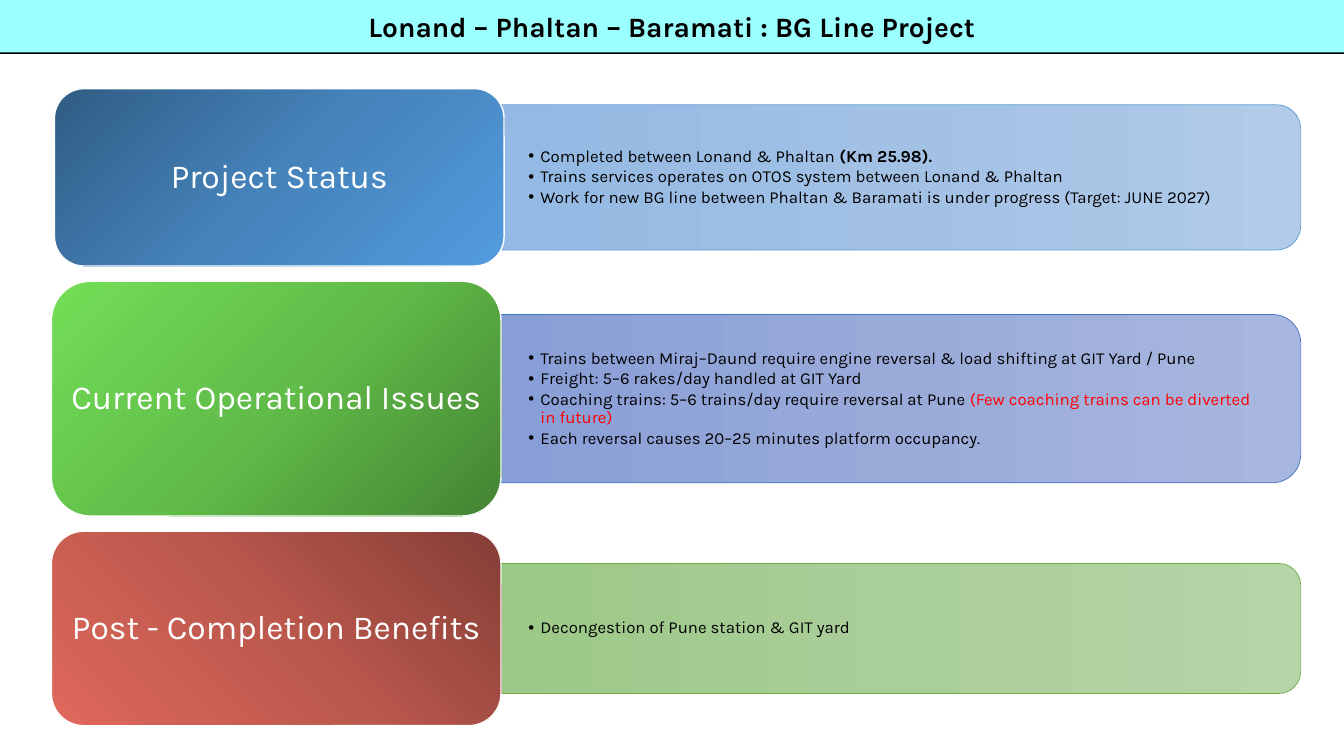
from lxml.etree import SubElement
from pptx import Presentation
from pptx.dml.color import RGBColor
from pptx.enum.shapes import MSO_SHAPE as Shape
from pptx.enum.text import MSO_ANCHOR as Anchor, MSO_AUTO_SIZE as AutoSize, PP_ALIGN as Align
from pptx.oxml import parse_xml
from pptx.oxml.ns import nsdecls, qn
from pptx.util import Inches, Pt

WIDTH, HEIGHT = 13.33, 7.5
FONT = "Karla"
BLACK, WHITE, RED = "000000", "FFFFFF", "FF0000"
TITLE = "Lonand – Phaltan – Baramati : BG Line Project"
TITLE_HEIGHT, TITLE_FILL = 0.52, "9BFFFF"
CARD_WIDTH = 4.46
PANEL_LEFT, PANEL_WIDTH = 4.97, 7.93

SECTIONS = [
    {
        "name": "Project Status",
        "card": (0.54, 0.88, 1.76), "panel_height": 1.44,
        "card_colors": ("305C84", "4583BB", "529BDE"), "focus": (0, 0),
        "panel_colors": ("B1CBE9", "A3C1E5", "93B9E4"), "outline": "5B9BD5",
        "points": [
            [("Completed between Lonand & Phaltan", BLACK, False), (" (Km 25.98).", BLACK, True)],
            [("Trains services operates on OTOS system between Lonand & Phaltan", BLACK, False)],
            [("Work for new BG line between Phaltan & Baramati is under progress (Target: JUNE 2027)",
              BLACK, False)],
        ],
    },
    {
        "name": "Current Operational Issues",
        "card": (0.51, 2.79, 2.33), "panel_height": 1.67,
        "card_colors": ("448433", "61BC49", "73DE57"), "focus": (100, 100),
        "panel_colors": ("A8B7DF", "9AABD9", "889ED7"), "outline": "4472C4",
        "points": [
            [("Trains between Miraj–Daund require engine reversal & load shifting at GIT Yard / Pune",
              BLACK, False)],
            [("Freight: 5–6 rakes/day handled at GIT Yard", BLACK, False)],
            [("Coaching trains: 5–6 trains/day require reversal at Pune ", BLACK, False),
             ("(Few coaching trains can be diverted in future)", RED, False)],
            [("Each reversal causes 20–25 minutes platform occupancy.", BLACK, False)],
        ],
    },
    {
        "name": "Post - Completion Benefits",
        "card": (0.51, 5.27, 1.93), "panel_height": 1.29,
        "card_colors": ("843E36", "BC584D", "DF685B"), "focus": (100, 0),
        "panel_colors": ("B5D5A7", "AACE9A", "9CC987"), "outline": "70AD47",
        "points": [[("Decongestion of Pune station & GIT yard", BLACK, False)]],
    },
]


def color(value):
    return RGBColor.from_string(value)


def place(shape, left, top, width, height):
    shape.left, shape.top = Inches(left), Inches(top)
    shape.width, shape.height = Inches(width), Inches(height)


def add_run(paragraph, text, size, text_color, bold=False):
    run = paragraph.add_run()
    run.text = text
    run.font.name, run.font.size, run.font.bold = FONT, Pt(size), bold
    run.font.color.rgb = color(text_color)


def set_frame(frame, horizontal, vertical):
    frame.word_wrap = True
    frame.auto_size = AutoSize.NONE
    frame.vertical_anchor = Anchor.MIDDLE
    frame.margin_left = frame.margin_right = Inches(horizontal)
    frame.margin_top = frame.margin_bottom = Inches(vertical)


def set_gradient(shape, colors, direction):
    stops = "".join(f'<a:gs pos="{index * 50000}"><a:srgbClr val="{value}"/></a:gs>'
                    for index, value in enumerate(colors))
    gradient = parse_xml(f'<a:gradFill {nsdecls("a")} rotWithShape="1">'
                         f'<a:gsLst>{stops}</a:gsLst>{direction}</a:gradFill>')
    shape._element.spPr.find(qn("a:prstGeom")).addnext(gradient)


def add_filled(slide, kind, box, colors, direction, outline, line_width):
    shape = slide.shapes.add_shape(kind, *map(Inches, box))
    shape.shadow.inherit = False
    set_gradient(shape, colors, direction)
    shape.line.color.rgb = color(outline)
    shape.line.width = Pt(line_width)
    return shape


def add_title(slide):
    title = slide.shapes.title
    place(title, 0, 0, WIDTH, TITLE_HEIGHT)
    properties = title._element.spPr
    properties.append(parse_xml(
        f'<a:prstGeom {nsdecls("a")} prst="snip2DiagRect"><a:avLst>'
        '<a:gd name="adj1" fmla="val 46600"/><a:gd name="adj2" fmla="val 16700"/>'
        '</a:avLst></a:prstGeom>'))
    title.fill.solid()
    title.fill.fore_color.rgb = color(TITLE_FILL)
    title.line.fill.background()
    title.shadow.inherit = False
    shadow = SubElement(properties.find(qn("a:effectLst")), qn("a:outerShdw"),
                        dist=str(Pt(1)), dir="5400000", rotWithShape="0")
    SubElement(shadow, qn("a:srgbClr"), val=BLACK)
    set_frame(title.text_frame, 0.1, 0.05)
    paragraph = title.text_frame.paragraphs[0]
    paragraph.alignment = Align.CENTER
    add_run(paragraph, TITLE, 20, BLACK, True)


def add_points(slide, box, points):
    frame = slide.shapes.add_textbox(*map(Inches, box)).text_frame
    set_frame(frame, 0.27, 0.14)
    for index, runs in enumerate(points):
        paragraph = frame.paragraphs[0] if index == 0 else frame.add_paragraph()
        paragraph.line_spacing, paragraph.space_after = 0.9, Pt(1.8)
        properties = paragraph._p.get_or_add_pPr()
        properties.set("marL", str(Inches(0.12)))
        properties.set("indent", str(Inches(-0.12)))
        SubElement(properties, qn("a:buFont"), typeface="Arial")
        SubElement(properties, qn("a:buChar"), char="•")
        for text, text_color, bold in runs:
            add_run(paragraph, text, 12, text_color, bold)


def add_section(slide, section):
    left, top, height = section["card"]
    middle = top + height / 2
    depth = section["panel_height"]
    center = PANEL_LEFT + PANEL_WIDTH / 2
    panel = add_filled(
        slide, Shape.ROUND_2_SAME_RECTANGLE,
        (center - depth / 2, middle - PANEL_WIDTH / 2, depth, PANEL_WIDTH),
        section["panel_colors"], '<a:lin ang="5400000" scaled="0"/>', section["outline"], 0.5)
    panel.rotation = 90
    add_points(slide, (PANEL_LEFT, middle - depth / 2, PANEL_WIDTH - 0.07, depth), section["points"])

    x, y = section["focus"]
    direction = (f'<a:path path="circle"><a:fillToRect l="{x * 1000}" t="{y * 1000}" '
                 f'r="{(100 - x) * 1000}" b="{(100 - y) * 1000}"/></a:path>')
    card = add_filled(slide, Shape.ROUNDED_RECTANGLE, (left, top, CARD_WIDTH, height),
                      section["card_colors"], direction, WHITE, 1)
    set_frame(card.text_frame, 0.05, 0.05)
    paragraph = card.text_frame.paragraphs[0]
    paragraph.alignment, paragraph.line_spacing = Align.CENTER, 0.9
    add_run(paragraph, section["name"], 24, WHITE)


def main():
    """Build the rail line project slide."""
    presentation = Presentation()
    presentation.slide_width, presentation.slide_height = Inches(WIDTH), Inches(HEIGHT)
    slide = presentation.slides.add_slide(presentation.slide_layouts[5])
    add_title(slide)
    for section in SECTIONS:
        add_section(slide, section)
    presentation.save("out.pptx")


if __name__ == "__main__":
    main()
